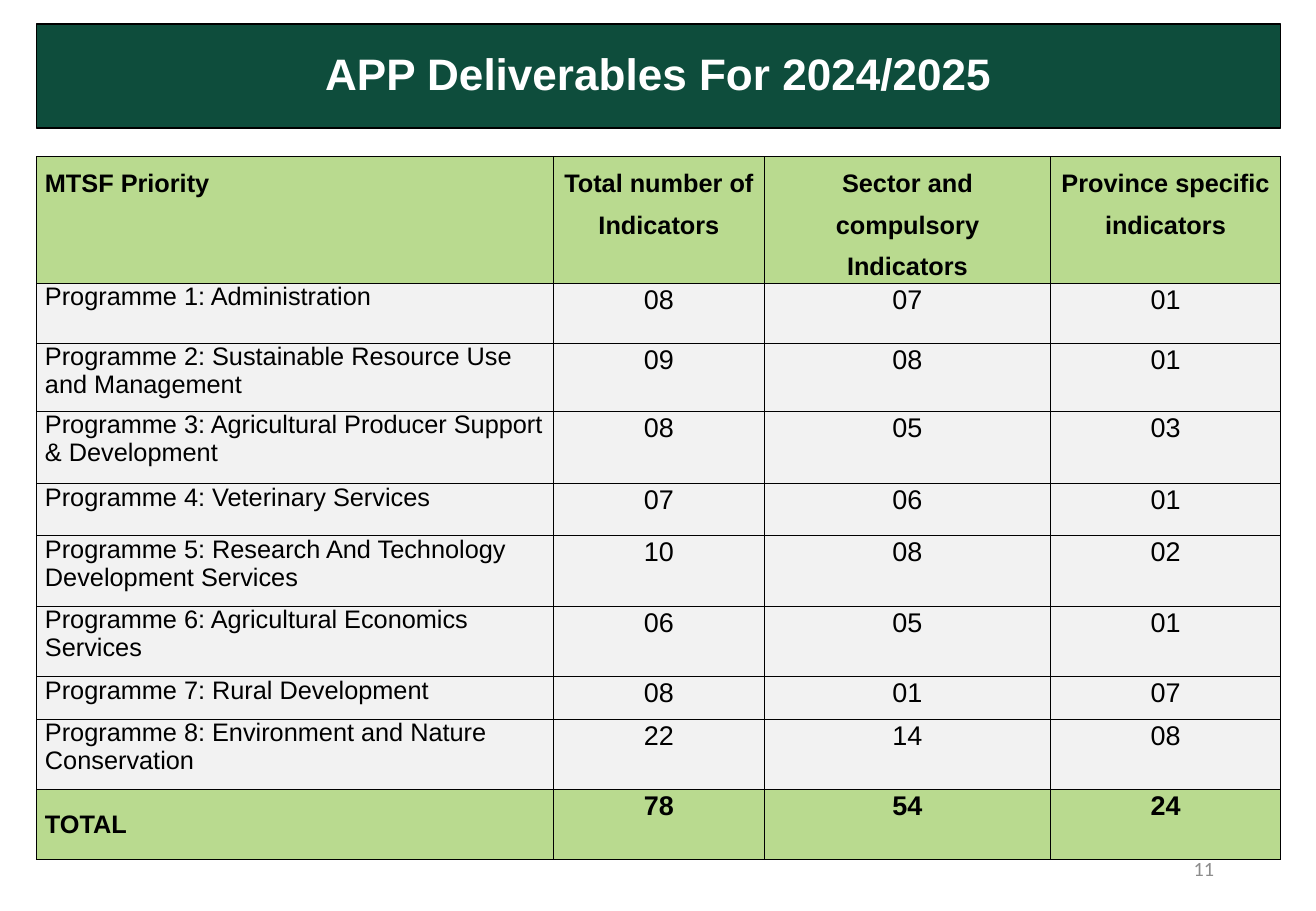
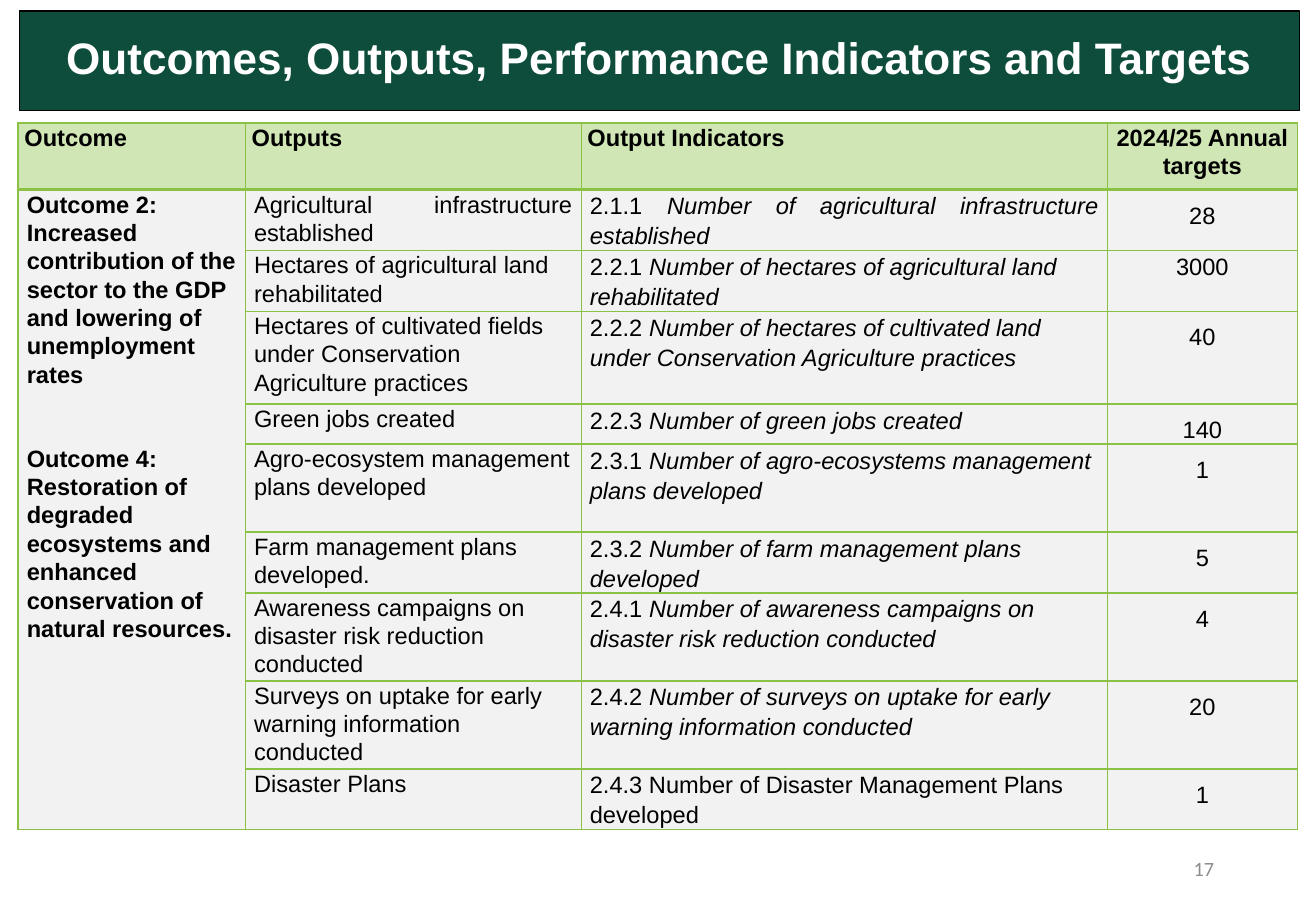
from lxml import etree
from pptx import Presentation
from pptx.dml.color import RGBColor
from pptx.enum.text import MSO_ANCHOR, MSO_AUTO_SIZE, PP_ALIGN
from pptx.oxml.ns import qn
from pptx.util import Cm, Pt

LEFT, CENTER, RIGHT = PP_ALIGN.LEFT, PP_ALIGN.CENTER, PP_ALIGN.RIGHT
JUSTIFY = PP_ALIGN.JUSTIFY
TOP, MIDDLE = MSO_ANCHOR.TOP, MSO_ANCHOR.MIDDLE
NO_AUTOFIT = MSO_AUTO_SIZE.NONE
TITLE_ONLY = 5

COLORS = {
    "band": "0E4D3C", "white": "FFFFFF", "black": "000000", "number": "8C8C8C",
    "head": "B9DA8F", "pale_head": "D1E6B5", "body": "F2F2F2", "rule": "8BC145",
}

# Exact line pitches keep the rows at their set heights
HEAD_PITCH = Pt(24.6)
TEXT_PITCH, INDICATOR_PITCH, TARGET_PITCH = Pt(16.8), Pt(17.8), Pt(23.4)

# Content: programme deliverables
DELIVERABLES_HEAD = ["MTSF Priority", "Total number of Indicators",
                     "Sector and compulsory Indicators",
                     "Province specific indicators"]
DELIVERABLES = [
    ("Programme 1: Administration", "08", "07", "01"),
    ("Programme 2: Sustainable Resource Use and Management", "09", "08", "01"),
    ("Programme 3: Agricultural Producer Support & Development", "08", "05", "03"),
    ("Programme 4: Veterinary Services", "07", "06", "01"),
    ("Programme 5: Research And Technology Development Services", "10", "08", "02"),
    ("Programme 6: Agricultural Economics Services", "06", "05", "01"),
    ("Programme 7: Rural Development", "08", "01", "07"),
    ("Programme 8: Environment and Nature Conservation", "22", "14", "08"),
]
DELIVERABLES_TOTAL = ("TOTAL", "78", "54", "24")
DELIVERABLES_COLS = [10.81, 4.41, 5.98, 4.81]
DELIVERABLES_ROWS = [2.65, 1.25, 1.42, 1.52, 1.09, 1.47, 1.47, 0.89, 1.47, 1.47]

# Content: outcomes and targets
TARGETS_HEAD = ["Outcome", "Outputs", "Output Indicators", "2024/25 Annual targets"]
OUTCOMES = [
    "Outcome 2: Increased contribution of the sector to the GDP and lowering of "
    "unemployment rates",
    "Outcome 4: Restoration of degraded ecosystems and enhanced conservation of "
    "natural resources.",
]
# Output, indicator number, indicator, target
TARGETS = [
    ("Agricultural infrastructure established", "2.1.1 ",
     "Number of agricultural infrastructure established", "28"),
    ("Hectares of agricultural land rehabilitated", "2.2.1 ",
     "Number of hectares of agricultural land rehabilitated", "3000"),
    ("Hectares of cultivated fields under Conservation Agriculture practices", "2.2.2 ",
     "Number of hectares of cultivated land under Conservation Agriculture practices",
     "40"),
    ("Green jobs created", "2.2.3 ", "Number of green jobs created", "140"),
    ("Agro-ecosystem management plans developed", "2.3.1 ",
     "Number of agro-ecosystems management plans developed", "1"),
    ("Farm management plans developed.", "2.3.2 ",
     "Number of farm management plans developed", "5"),
    ("Awareness campaigns on disaster risk reduction conducted", "2.4.1 ",
     "Number of awareness campaigns on disaster risk reduction conducted", "4"),
    ("Surveys on uptake for early warning information conducted", "2.4.2 ",
     "Number of surveys on uptake for early warning information conducted", "20"),
    ("Disaster Plans", "2.4.3 ", "Number of Disaster Management Plans developed", "1"),
]
TARGETS_COLS = [4.75, 7.02, 11.0, 3.97]
TARGETS_ROWS = [1.4, 1.27, 1.27, 1.94, 0.84, 1.84, 1.27, 1.84, 1.84, 1.27]


def rgb(name):
    return RGBColor.from_string(COLORS[name])


def write(frame, paragraphs, size=14, color="black", font="Arial", bold=False,
          align=LEFT, spacing=1.0, gap=0):
    """Fill a frame; a paragraph is a string or a list of (text, italic) runs."""
    frame.word_wrap = True
    for index, content in enumerate(paragraphs):
        paragraph = frame.paragraphs[0] if index == 0 else frame.add_paragraph()
        paragraph.alignment = align
        paragraph.line_spacing = spacing
        paragraph.space_before = Pt(0)
        paragraph.space_after = Pt(gap if index < len(paragraphs) - 1 else 0)
        runs = [(content, False)] if isinstance(content, str) else content
        for text, italic in runs:
            run = paragraph.add_run()
            run.text = text
            run.font.name, run.font.size = font, Pt(size)
            run.font.bold, run.font.italic = bold, italic
            run.font.color.rgb = rgb(color)


def add_titled_slide(prs, title, left, top, width, height):
    """New slide with the title band."""
    slide = prs.slides.add_slide(prs.slide_layouts[TITLE_ONLY])
    band = slide.shapes.title
    band.left, band.top, band.width, band.height = map(Cm, (left, top, width, height))
    band.fill.solid()
    band.fill.fore_color.rgb = rgb("band")
    band.line.color.rgb = rgb("black")
    band.line.width = Pt(0.75)
    band.text_frame.auto_size = NO_AUTOFIT
    band.text_frame.vertical_anchor = MIDDLE
    write(band.text_frame, [title], size=26.1, color="white", bold=True,
          align=CENTER, spacing=0.9)
    return slide


def add_page_number(slide, number):
    page = slide.shapes.add_textbox(Cm(19.43), Cm(17.65), Cm(6.2), Cm(1.02)).text_frame
    page.vertical_anchor = MIDDLE
    write(page, [number], size=12, color="number", font="Calibri", align=RIGHT)


def add_grid(slide, left, top, columns, rows):
    """Unstyled table with the given column widths and row heights."""
    table = slide.shapes.add_table(len(rows), len(columns), Cm(left), Cm(top),
                                   Cm(sum(columns)), Cm(sum(rows))).table
    table.first_row = table.horz_banding = False
    for column, width in zip(table.columns, columns):
        column.width = Cm(width)
    for row, height in zip(table.rows, rows):
        row.height = Cm(height)
    return table


def style_cell(cell, fill, line, widths, margin=0.18, anchor=TOP):
    """Fill, margins and borders; widths run left, right, top, bottom."""
    cell.fill.solid()
    cell.fill.fore_color.rgb = rgb(fill)
    cell.margin_left = cell.margin_right = Cm(margin)
    cell.margin_top = cell.margin_bottom = 0
    cell.vertical_anchor = anchor
    properties = cell._tc.get_or_add_tcPr()
    for index, (side, width) in enumerate(zip("LRTB", widths)):
        border = etree.Element(qn(f"a:ln{side}"), w=str(Pt(width)))
        solid = etree.SubElement(border, qn("a:solidFill"))
        etree.SubElement(solid, qn("a:srgbClr"), val=COLORS[line])
        properties.insert(index, border)


def build_deliverables(prs):
    slide = add_titled_slide(prs, "APP Deliverables For 2024/2025",
                             0.76, 0.5, 26.01, 2.18)
    table = add_grid(slide, 0.76, 3.27, DELIVERABLES_COLS, DELIVERABLES_ROWS)
    rows = [DELIVERABLES_HEAD, *DELIVERABLES, DELIVERABLES_TOTAL]
    last = len(rows) - 1
    for r, row in enumerate(rows):
        strong = r in (0, last)
        for c, text in enumerate(row):
            cell = table.cell(r, c)
            style_cell(cell, "head" if strong else "body", "black", [0.25] * 4,
                       anchor=MIDDLE if r == last and c == 0 else TOP)
            figure = r > 0 and c > 0
            write(cell.text_frame, [text], size=16 if figure else 15, bold=strong,
                  align=CENTER if c else LEFT,
                  spacing=HEAD_PITCH if r == 0 else 1.07 if figure else 1.0)
    add_page_number(slide, "11")


def build_targets(prs):
    slide = add_titled_slide(prs, "Outcomes, Outputs, Performance Indicators and Targets",
                             0.4, 0.23, 26.77, 2.08)
    table = add_grid(slide, 0.38, 2.57, TARGETS_COLS, TARGETS_ROWS)
    last = len(TARGETS)
    for r in range(last + 1):
        for c in range(len(TARGETS_COLS)):
            widths = [1, 1, 2 if r == 1 else 1, 2 if r == 0 else 1]
            style_cell(table.cell(r, c), "body" if r else "pale_head", "rule", widths,
                       margin=0.18 if r else 0.13)

    for c, text in enumerate(TARGETS_HEAD):
        write(table.cell(0, c).text_frame, [text], bold=True, spacing=TEXT_PITCH,
              align=CENTER if c == 3 else LEFT)

    table.cell(1, 0).merge(table.cell(last, 0))
    write(table.cell(1, 0).text_frame, OUTCOMES, bold=True, spacing=TEXT_PITCH, gap=33)

    for r, (output, code, indicator, target) in enumerate(TARGETS, start=1):
        align = JUSTIFY if r == 1 else LEFT
        write(table.cell(r, 1).text_frame, [output], align=align, spacing=TEXT_PITCH)
        write(table.cell(r, 2).text_frame, [[(code, False), (indicator, r < last)]],
              align=align, spacing=INDICATOR_PITCH)
        write(table.cell(r, 3).text_frame, [target], align=CENTER,
              spacing=INDICATOR_PITCH if target == "3000" else TARGET_PITCH)
    add_page_number(slide, "17")


def main():
    prs = Presentation()
    prs.slide_width, prs.slide_height = Cm(27.51), Cm(19.05)
    build_deliverables(prs)
    build_targets(prs)
    prs.save("out.pptx")


if __name__ == "__main__":
    main()
